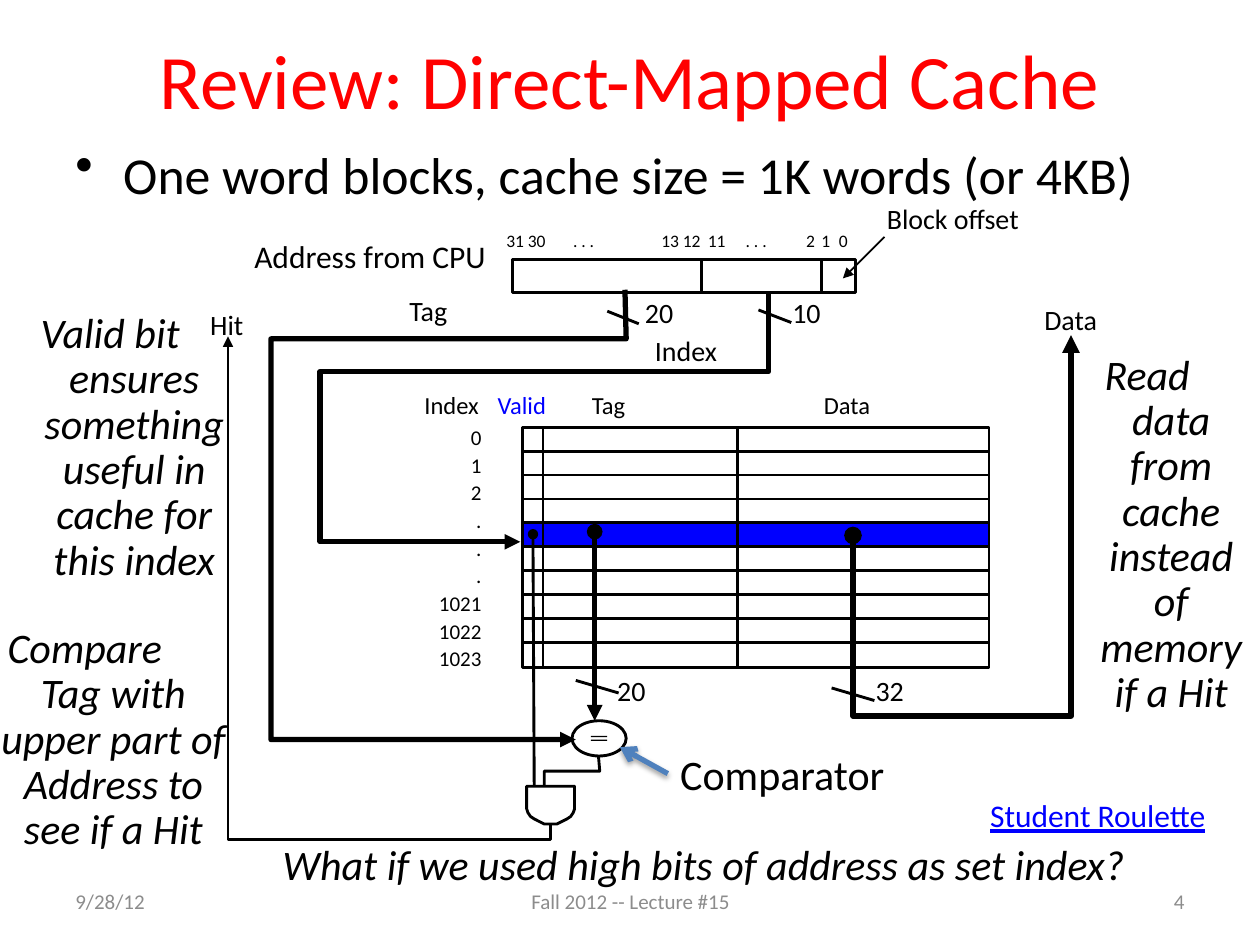
"""Builds a slide that reviews how a direct-mapped cache looks up a word."""
from dataclasses import dataclass
from math import cos, pi, sin

from lxml.etree import SubElement
from pptx import Presentation
from pptx.dml.color import RGBColor
from pptx.enum.shapes import MSO_CONNECTOR, MSO_SHAPE
from pptx.enum.text import MSO_ANCHOR, PP_ALIGN
from pptx.oxml.ns import qn
from pptx.util import Pt

LEFT, CENTER, RIGHT = PP_ALIGN.LEFT, PP_ALIGN.CENTER, PP_ALIGN.RIGHT
TOP, MIDDLE = MSO_ANCHOR.TOP, MSO_ANCHOR.MIDDLE
RECTANGLE, OVAL = MSO_SHAPE.RECTANGLE, MSO_SHAPE.OVAL
STRAIGHT = MSO_CONNECTOR.STRAIGHT
PX = 9144
HANGING = 38
THIN, THICK = 1.63, 3
COLORS = {"black": "000000", "red": "FF0000", "blue": "0000FF",
          "gray": "8C8C8C", "steel": "4F81BD"}


@dataclass
class Label:
    text: str
    left: int
    top: int
    width: int
    height: int
    size: float = 16
    color: str = "black"
    align: PP_ALIGN = LEFT
    anchor: MSO_ANCHOR = TOP
    spacing: float = 1.0
    italic: bool = False
    underline: bool = False
    hanging: bool = False
    bullet: bool = False
    wrap: bool = False
    tabs: tuple = ()


@dataclass
class Wire:
    points: list
    width: float = THIN
    head: str = ""
    tail: str = ""
    color: str = "black"
    shadow: bool = False


@dataclass
class Block:
    kind: MSO_SHAPE
    left: int
    top: int
    width: int
    height: int
    fill: str = ""
    outline: float = THIN


def rgb(color: str) -> RGBColor:
    return RGBColor.from_string(COLORS[color])


def draw_label(slide, label: Label) -> None:
    box = slide.shapes.add_textbox(label.left * PX, label.top * PX,
                                   label.width * PX, label.height * PX)
    frame = box.text_frame
    frame.text = label.text
    frame.word_wrap = label.wrap
    frame.vertical_anchor = label.anchor
    for paragraph in frame.paragraphs:
        paragraph.alignment = label.align
        paragraph.line_spacing = label.spacing
        font = paragraph.font
        font.name, font.size = "Calibri", Pt(label.size)
        font.italic, font.underline = label.italic, label.underline
        font.color.rgb = rgb(label.color)
        properties = paragraph._p.get_or_add_pPr()
        if label.hanging:
            properties.set("marL", str(HANGING * PX))
            properties.set("indent", str(-HANGING * PX))
        default_font = properties.find(qn("a:defRPr"))
        if label.bullet:
            bullet = SubElement(properties, qn("a:buChar"), char="•")
            default_font.addprevious(bullet)
        if label.tabs:
            stops = SubElement(properties, qn("a:tabLst"))
            for position in label.tabs:
                SubElement(stops, qn("a:tab"), pos=str(position * PX), algn="l")
            default_font.addprevious(stops)


def draw_wire(slide, wire: Wire) -> None:
    points = [(x * PX, y * PX) for x, y in wire.points]
    if len(points) == 2:
        path = slide.shapes.add_connector(STRAIGHT, *points[0], *points[1])
    else:
        builder = slide.shapes.build_freeform(*points[0], scale=1.0)
        builder.add_line_segments(points[1:], close=False)
        path = builder.convert_to_shape()
        path.fill.background()
    path.line.color.rgb = rgb(wire.color)
    path.line.width = Pt(wire.width)
    properties = path._element.spPr
    outline = properties.find(qn("a:ln"))
    for end, kind in (("a:headEnd", wire.head), ("a:tailEnd", wire.tail)):
        if kind:
            SubElement(outline, qn(end), type=kind)
    effects = SubElement(properties, qn("a:effectLst"))
    if wire.shadow:
        shade = SubElement(effects, qn("a:outerShdw"), blurRad=str(Pt(3.1)),
                           dist=str(Pt(1.6)), dir="5400000", rotWithShape="0")
        tint = SubElement(shade, qn("a:srgbClr"), val=COLORS["black"])
        SubElement(tint, qn("a:alpha"), val="38000")


def draw_block(slide, block: Block) -> None:
    shape = slide.shapes.add_shape(block.kind, block.left * PX, block.top * PX,
                                   block.width * PX, block.height * PX)
    shape.shadow.inherit = False
    if block.fill:
        shape.fill.solid()
        shape.fill.fore_color.rgb = rgb(block.fill)
    else:
        shape.fill.background()
    if block.outline:
        shape.line.color.rgb = rgb("black")
        shape.line.width = Pt(block.outline)
    else:
        shape.line.fill.background()


def remark(text: str, left: int, top: int, width: int, height: int) -> Label:
    return Label(text, left, top, width, height, 24, align=CENTER, spacing=0.9,
                 italic=True, hanging=True, wrap=True)


def footer(text: str, left: int, width: int, align: PP_ALIGN) -> Label:
    return Label(text, left, 695, width, 40, 12, "gray", align, MIDDLE, wrap=True)


ROW, CACHE_TOP, CACHE_LEFT, CACHE_RIGHT = 19, 339, 415, 785
CACHE_WIDTH, CACHE_BOTTOM = CACHE_RIGHT - CACHE_LEFT, CACHE_TOP + 191
BLOCKS = [
    Block(RECTANGLE, CACHE_LEFT, CACHE_TOP, CACHE_WIDTH, CACHE_BOTTOM - CACHE_TOP),
    Block(RECTANGLE, CACHE_LEFT, CACHE_TOP + 4 * ROW, CACHE_WIDTH, ROW, "blue"),
    Block(RECTANGLE, 407, 206, 272, 26),
    Block(OVAL, 454, 572, 43, 28),
    *[Block(RECTANGLE, 469, bar, 13, 1, "black", 0) for bar in (584, 587)],
]
row_rules = [Wire([(CACHE_RIGHT, y), (CACHE_LEFT, y)])
             for y in range(CACHE_TOP + ROW, CACHE_BOTTOM - ROW, ROW)]
column_rules = [Wire([(x, CACHE_TOP), (x, CACHE_BOTTOM)]) for x in (431, 585)]
field_rules = [Wire([(x, 206), (x, 232)]) for x in (557, 652)]
bus_ticks = [Wire([(x, y), (x + run, y + 10)])
             for x, y, run in ((482, 247, 25), (602, 246, 26),
                               (457, 540, 34), (660, 546, 34))]
gate_curve = [(round(437 - 19 * cos(step * pi / 12)),
               round(642 + 12 * sin(step * pi / 12))) for step in range(13)]
WIRES = row_rules + column_rules + field_rules + bus_ticks + [
    Wire([(496, 230), (497, 269), (215, 269), (215, 587), (457, 587)],
         THICK, tail="triangle"),
    Wire([(610, 232), (610, 295), (254, 295), (254, 430), (413, 430)],
         THICK, tail="triangle"),
    Wire([(702, 188), (669, 221)], 1, tail="triangle"),
    Wire([(472, 422), (472, 572)], THICK, "oval", "triangle"),
    Wire([(677, 425), (677, 568), (850, 568), (850, 266)], 3.38, "oval", "triangle"),
    Wire([(418, 624), *gate_curve, (456, 624), (418, 624)]),
    Wire([(423, 424), (424, 624)], head="oval"),
    Wire([(475, 600), (476, 612), (432, 612), (432, 624)]),
    Wire([(437, 654), (437, 666), (181, 666), (181, 267)], tail="triangle"),
    Wire([(530, 614), (492, 593)], THICK, tail="arrow", color="steel", shadow=True),
]
LABELS = [
    Label("Review: Direct-Mapped Cache", 50, 0, 900, 125, 44, "red", CENTER,
          MIDDLE, wrap=True),
    Label("One word blocks, cache size = 1K words (or 4KB)", 50, 126, 883, 74,
          29.6, spacing=0.6, hanging=True, bullet=True, wrap=True),
    Label("Address from CPU", 192, 183, 206, 40, 18),
    Label("31 30\t. . .\t13 12\t11\t. . .\t2\t1\t0", 392, 178, 310, 27, 10,
          wrap=True, tabs=(53, 123, 160, 190, 238, 250, 264)),
    Label("Block offset", 694, 155, 125, 37, wrap=True),
    Label("Tag", 315, 228, 58, 37),
    Label("20", 502, 230, 45, 37),
    Label("10", 619, 230, 45, 37),
    Label("Index", 510, 260, 74, 37),
    Label("Index", 327, 305, 70, 33, 14),
    Label("Valid", 385, 305, 59, 34, 14, "blue"),
    Label("Tag", 460, 305, 53, 33, 14),
    Label("Data", 644, 305, 61, 33, 14),
    Label("0\n1\n2\n.\n.\n.\n1021\n1022\n1023", 335, 330, 57, 209, 12,
          align=RIGHT, spacing=1.1),
    Label("20", 480, 530, 45, 37),
    Label("32", 685, 530, 45, 37),
    Label("Data", 819, 235, 67, 37),
    Label("Hit", 157, 239, 47, 37),
    Label("Comparator", 530, 589, 184, 50, 24),
    Label("Student Roulette", 776, 627, 193, 40, 18, "blue", underline=True),
    remark("Valid bit ensures something useful in cache for this index",
           -21, 243, 217, 50),
    remark("Compare \vTag with upper part of Address to see if a Hit",
           -50, 493, 242, 224),
    remark("Read\vdata from cache instead of memory if a Hit", 821, 276, 179, 50),
    remark("What if we used high bits of address as set index?", 117, 665, 883, 50),
    footer("9/28/12", 50, 233, LEFT),
    footer("Fall 2012 -- Lecture #15", 342, 317, CENTER),
    footer("4", 717, 233, RIGHT),
]


def main() -> None:
    deck = Presentation()
    deck.slide_width, deck.slide_height = 1000 * PX, 750 * PX
    slide = deck.slides.add_slide(deck.slide_layouts[6])
    for draw, parts in ((draw_block, BLOCKS), (draw_wire, WIRES), (draw_label, LABELS)):
        for part in parts:
            draw(slide, part)
    deck.save("out.pptx")


if __name__ == "__main__":
    main()
